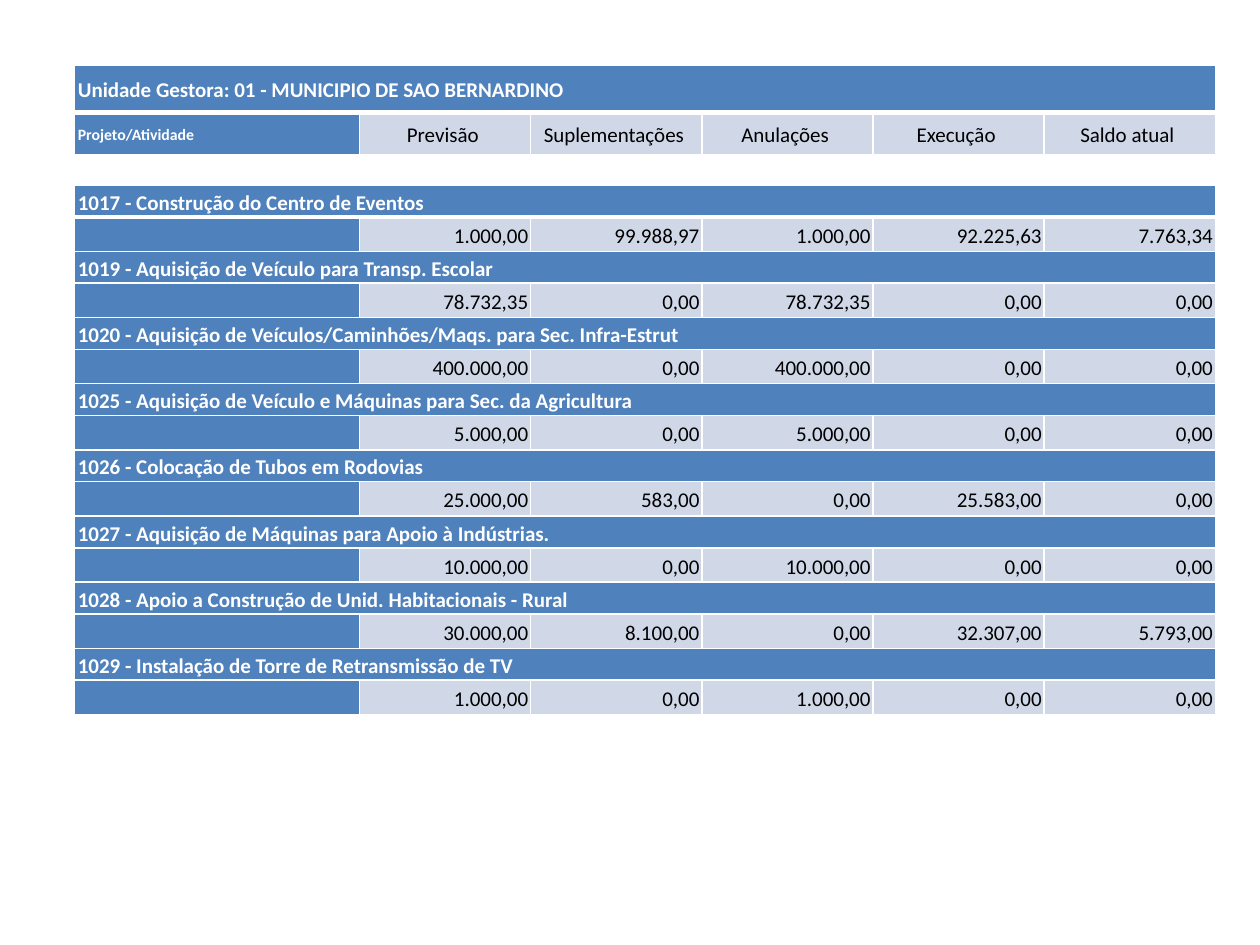
"""Build the budget slide: a heading table above a table of projects."""
import pptx
import pptx.util
import pptx.dml.color
import pptx.enum.text
import pptx.oxml
import pptx.oxml.ns

Pt = pptx.util.Pt
Align = pptx.enum.text.PP_ALIGN

UNIT = "Unidade Gestora: 01 - MUNICIPIO DE SAO BERNARDINO"
HEADS = ["Projeto/Atividade", "Previsão ", "Suplementações ", "Anulações ",
         "Execução ", "Saldo atual "]
ITEMS = [
    ("1017 - Construção do Centro de Eventos",
     ["1.000,00", "99.988,97", "1.000,00", "92.225,63", "7.763,34"]),
    ("1019 - Aquisição de Veículo para Transp. Escolar",
     ["78.732,35", "0,00", "78.732,35", "0,00", "0,00"]),
    ("1020 - Aquisição de Veículos/Caminhões/Maqs. para Sec. Infra-Estrut",
     ["400.000,00", "0,00", "400.000,00", "0,00", "0,00"]),
    ("1025 - Aquisição de Veículo e Máquinas para Sec. da Agricultura",
     ["5.000,00", "0,00", "5.000,00", "0,00", "0,00"]),
    ("1026 - Colocação de Tubos em Rodovias",
     ["25.000,00", "583,00", "0,00", "25.583,00", "0,00"]),
    ("1027 - Aquisição de Máquinas para Apoio à Indústrias.",
     ["10.000,00", "0,00", "10.000,00", "0,00", "0,00"]),
    ("1028 - Apoio a Construção de Unid. Habitacionais - Rural",
     ["30.000,00", "8.100,00", "0,00", "32.307,00", "5.793,00"]),
    ("1029 - Instalação de Torre de Retransmissão de TV",
     ["1.000,00", "0,00", "1.000,00", "0,00", "0,00"]),
]
COLORS = {"blue": "4F81BD", "pale": "D0D8E8", "white": "FFFFFF", "black": "000000"}
COLS = [163] + [97.8] * 5
LEFT = 42.5
FONT = "Calibri"


def color(name):
    return pptx.dml.color.RGBColor.from_string(COLORS[name])


def border(cell, low):
    props = cell._tc.get_or_add_tcPr()
    sides = [("lnL", 1), ("lnR", 1), ("lnT", 1), ("lnB", low)]
    for spot, (tag, wide) in enumerate(sides):
        props.insert(spot, pptx.oxml.parse_xml(
            f'<a:{tag} {pptx.oxml.ns.nsdecls("a")} w="{Pt(wide)}"><a:solidFill>'
            f'<a:srgbClr val="{COLORS["white"]}"/></a:solidFill></a:{tag}>'))


def style(cell, text, head, align, size, pad, low):
    cell.fill.solid()
    cell.fill.fore_color.rgb = color("blue" if head else "pale")
    border(cell, low)
    cell.margin_left = cell.margin_right = Pt(pad[0])
    cell.margin_top = cell.margin_bottom = Pt(pad[1])
    cell.vertical_anchor = pptx.enum.text.MSO_ANCHOR.MIDDLE
    para = cell.text_frame.paragraphs[0]
    if not text:
        para._p.append(pptx.oxml.parse_xml(
            f'<a:endParaRPr {pptx.oxml.ns.nsdecls("a")} sz="{size * 100}"/>'))
        return
    para.alignment = align
    para.line_spacing = 1.15
    run = para.add_run()
    run.text = text
    run.font.name = FONT
    run.font.size = Pt(size)
    run.font.bold = head
    run.font.color.rgb = color("white" if head else "black")


def grid(slide, top, rows, highs, align, pad, small):
    frame = slide.shapes.add_table(len(rows), len(COLS), Pt(LEFT), Pt(top),
                                   Pt(sum(COLS)), Pt(sum(highs)))
    table = frame.table
    for col, wide in zip(table.columns, COLS):
        col.width = Pt(wide)
    for y, (texts, high) in enumerate(zip(rows, highs)):
        table.rows[y].height = Pt(high)
        wide = len(texts) == 1
        for x in range(len(COLS)):
            text = texts[x] if x < len(texts) else ""
            head = wide or x == 0
            side = Align.LEFT if head else align
            size = small if x == 0 and not wide else 12
            style(table.cell(y, x), text, head, side, size,
                  (2, 0.7) if head else pad, 1 if y else 3)
        if wide:
            table.cell(y, 0).merge(table.cell(y, len(COLS) - 1))


def main():
    deck = pptx.Presentation()
    deck.slide_width, deck.slide_height = Pt(720), Pt(540)
    slide = deck.slides.add_slide(deck.slide_layouts[6])
    rows = [row for name, sums in ITEMS for row in ([name], [""] + sums)]
    grid(slide, 105.8, rows, [17.8, 19.1] * len(ITEMS), Align.RIGHT, (1.4, 1.4), 12)
    grid(slide, 37.4, [[UNIT], HEADS], [26.8, 24.2], Align.CENTER, (2, 0.7), 9)
    deck.save("out.pptx")


if __name__ == "__main__":
    main()
